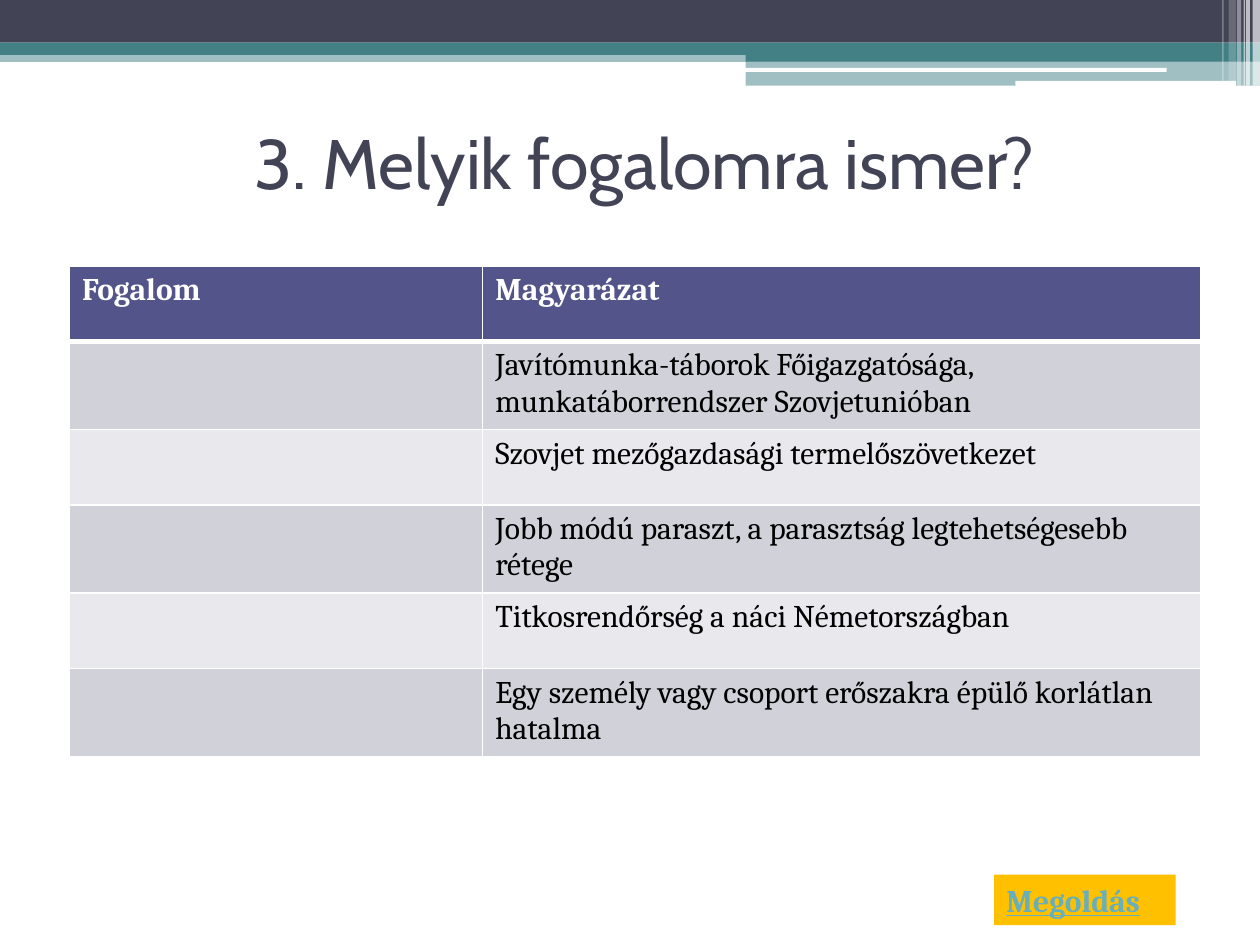
"""Build the concept-matching quiz slide with its table and solution label."""
import lxml.etree
import pptx
import pptx.dml.color
import pptx.enum.shapes
import pptx.enum.text
import pptx.oxml.ns
import pptx.util

Cm, Pt = pptx.util.Cm, pptx.util.Pt
qn = pptx.oxml.ns.qn
SHAPES = pptx.enum.shapes.MSO_SHAPE
COLORS = {
    "white": "FFFFFF", "black": "000000", "slate": "424456", "teal": "438086",
    "indigo": "53548A", "dark band": "D1D1DA", "light band": "E9E9ED",
    "amber": "FFC000", "link": "67AFBD",
}


def add_solid(parent, color, alpha=100):
    solid = lxml.etree.SubElement(parent, qn("a:solidFill"))
    value = lxml.etree.SubElement(solid, qn("a:srgbClr"), val=COLORS[color])
    if alpha < 100:
        lxml.etree.SubElement(value, qn("a:alpha"), val=str(alpha * 1000))


def write_text(text_frame, text, color, **formats):
    run = text_frame.paragraphs[0].add_run()
    run.text = text
    for name, value in formats.items():
        setattr(run.font, name, value)
    run.font.color.rgb = pptx.dml.color.RGBColor.from_string(COLORS[color])
    return run


presentation = pptx.Presentation()
presentation.slide_width, presentation.slide_height = Cm(25.4), Cm(19.05)
slide = presentation.slides.add_slide(presentation.slide_layouts[6])

bars = [
    (0, 1.02, 25.4, 0.23, "teal", 50),
    (0, 0, 25.4, 0.86, "slate", 100),
    (0, 0.86, 25.4, 0.25, "teal", 100),
    (15.03, 0.99, 10.37, 0.25, "teal", 100),
    (15.03, 1.23, 10.37, 0.5, "teal", 50),
    (15.01, 1.37, 8.51, 0.08, "white", 100),
    (20.47, 1.63, 4.45, 0.1, "white", 100),
    (25.25, 0, 0.15, 1.73, "white", 65),
    (25.12, 0, 0.08, 1.73, "white", 65),
    (25.07, 0, 0.03, 1.73, "white", 60),
    (24.94, 0, 0.08, 1.73, "white", 40),
    (24.77, 0, 0.15, 1.63, "white", 20),
    (24.64, 0, 0.03, 1.63, "white", 30),
]
for left, top, width, height, color, alpha in bars:
    is_rounded = color == "white" and alpha == 100
    preset = SHAPES.ROUNDED_RECTANGLE if is_rounded else SHAPES.RECTANGLE
    bar = slide.shapes.add_shape(preset, Cm(left), Cm(top), Cm(width), Cm(height))
    bar.shadow.inherit = False
    bar.line.fill.background()
    bar.fill.solid()
    bar.fill.fore_color.rgb = pptx.dml.color.RGBColor.from_string(COLORS[color])
    if alpha < 100:
        value = bar.fill._xPr.find(qn("a:solidFill"))[0]
        lxml.etree.SubElement(value, qn("a:alpha"), val=str(alpha * 1000))

title = slide.shapes.add_textbox(Cm(1.57), Cm(1.78), Cm(22.86), Cm(2.97))
title.text_frame.word_wrap = True
title.text_frame.vertical_anchor = pptx.enum.text.MSO_ANCHOR.MIDDLE
title.text_frame.paragraphs[0].alignment = pptx.enum.text.PP_ALIGN.CENTER
write_text(title.text_frame, "3. Melyik fogalomra ismer?", "slate", name="Cabin", size=Pt(40))

solution = slide.shapes.add_textbox(Cm(20.04), Cm(17.63), Cm(3.66), Cm(1.02))
solution.fill.solid()
solution.fill.fore_color.rgb = pptx.dml.color.RGBColor.from_string(COLORS["amber"])
solution.text_frame.word_wrap = True
run = write_text(solution.text_frame, "Megoldás", "link",
                 name="Cambria", size=Pt(18), bold=True, underline=True)
outline = lxml.etree.Element(qn("a:ln"), w=str(Pt(1.4)))
add_solid(outline, "white")
run.font._element.insert(0, outline)

rows = [
    ("Fogalom", "Magyarázat"),
    ("", "Javítómunka-táborok Főigazgatósága, munkatáborrendszer Szovjetunióban"),
    ("", "Szovjet mezőgazdasági termelőszövetkezet"),
    ("", "Jobb módú paraszt, a parasztság legtehetségesebb rétege"),
    ("", "Titkosrendőrség a náci Németországban"),
    ("", "Egy személy vagy csoport erőszakra épülő korlátlan hatalma"),
]
row_height = 1.52
table = slide.shapes.add_table(
    len(rows), 2, Cm(1.4), Cm(5.36), Cm(22.81), Cm(row_height * len(rows))
).table
for column, width in zip(table.columns, (8.33, 14.48)):
    column.width = Cm(width)
for row_index, texts in enumerate(rows):
    table.rows[row_index].height = Cm(row_height)
    is_header = row_index == 0
    fill = "indigo" if is_header else ("light band", "dark band")[row_index % 2]
    for column_index, text in enumerate(texts):
        cell = table.cell(row_index, column_index)
        properties = cell._tc.get_or_add_tcPr()
        for side in "LRTB":
            is_header_edge = (row_index, side) in ((0, "B"), (1, "T"))
            border = lxml.etree.SubElement(
                properties, qn("a:ln" + side), w=str(Pt(3 if is_header_edge else 1)))
            add_solid(border, "white")
        cell.fill.solid()
        cell.fill.fore_color.rgb = pptx.dml.color.RGBColor.from_string(COLORS[fill])
        if text:
            write_text(cell.text_frame, text, "white" if is_header else "black",
                       name="Cambria", size=Pt(18), bold=is_header)

presentation.save("out.pptx")
